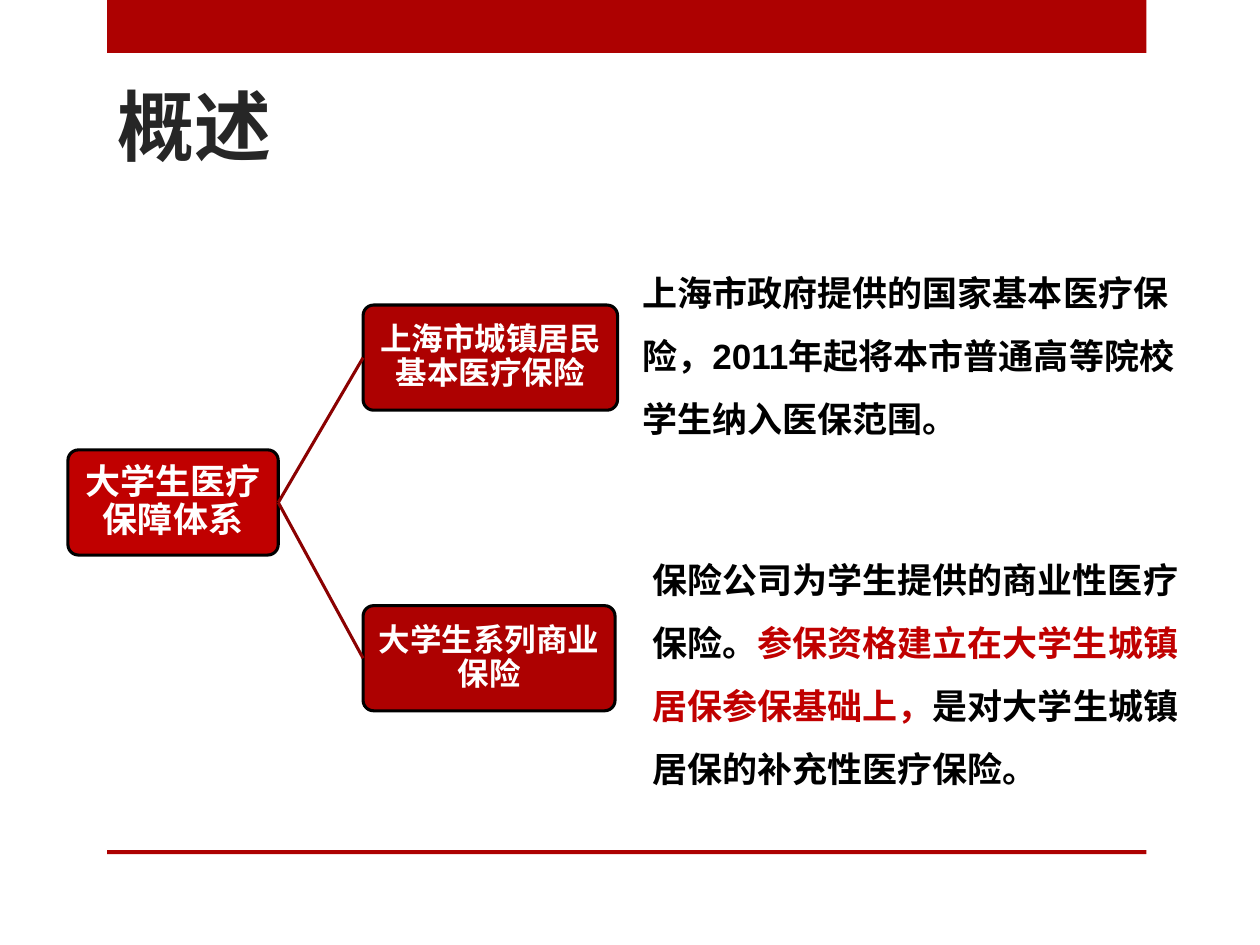
from dataclasses import dataclass

import pptx
import pptx.dml.color
import pptx.enum.shapes
import pptx.enum.text
import pptx.oxml
import pptx.oxml.ns
import pptx.util

Cm = pptx.util.Cm
Pt = pptx.util.Pt
SHAPES = pptx.enum.shapes.MSO_SHAPE
ALIGN = pptx.enum.text.PP_ALIGN
ANCHOR = pptx.enum.text.MSO_ANCHOR


@dataclass(frozen=True)
class Theme:
    font: str = "Arial"
    band: str = "AD0101"
    accent: str = "C00000"
    link: str = "8B0101"
    heading: str = "262626"
    dark: str = "000000"
    light: str = "FFFFFF"
    title_size: int = 44
    body_size: int = 20
    branch_size: int = 18
    line_width: float = 1.75


THEME = Theme()


def rgb(value):
    return pptx.dml.color.RGBColor.from_string(value)


def write_text(frame, text, *, size, color=THEME.dark, align=ALIGN.LEFT,
               anchor=ANCHOR.TOP, spacing=1.0, inset=None):
    pieces = [(text, color)] if isinstance(text, str) else text
    frame.word_wrap = True
    frame.vertical_anchor = anchor
    if inset is not None:
        frame.margin_left = frame.margin_right = Cm(inset)
        frame.margin_top = frame.margin_bottom = Cm(inset)
    paragraph = frame.paragraphs[0]
    paragraph.alignment = align
    paragraph.line_spacing = spacing
    for words, words_color in pieces:
        run = paragraph.add_run()
        run.text = words
        run.font.name = THEME.font
        run.font.size = Pt(size)
        run.font.bold = True
        run.font.color.rgb = rgb(words_color)


def add_block(slide, kind, box, fill):
    block = slide.shapes.add_shape(kind, *map(Cm, box))
    block.shadow.inherit = False
    block.fill.solid()
    block.fill.fore_color.rgb = rgb(fill)
    block.line.fill.background()
    return block


def add_frame_bands(slide, box):
    left, top, width, height = box
    rule_height = 0.08
    add_block(slide, SHAPES.RECTANGLE, (left, top, width, 1.07), THEME.band)
    add_block(slide, SHAPES.RECTANGLE,
              (left, top + height - rule_height, width, rule_height), THEME.band)


def add_text_region(slide, box, text, **text_format):
    region = slide.shapes.add_textbox(*map(Cm, box))
    write_text(region.text_frame, text, **text_format)


def add_node(slide, box, text, fill, size):
    node = add_block(slide, SHAPES.ROUNDED_RECTANGLE, box, fill)
    node.adjustments[0] = 0.1
    node.line.color.rgb = rgb(THEME.dark)
    node.line.width = Pt(THEME.line_width)
    write_text(node.text_frame, text, size=size, color=THEME.light,
               align=ALIGN.CENTER, anchor=ANCHOR.MIDDLE, spacing=0.9, inset=0.03)
    return node


def add_link(slide, root, branch):
    link = slide.shapes.add_connector(
        pptx.enum.shapes.MSO_CONNECTOR.STRAIGHT, 0, 0, 0, 0)
    link.begin_connect(root, 3)
    link.end_connect(branch, 1)
    link.line.color.rgb = rgb(THEME.link)
    link.line.width = Pt(THEME.line_width)
    link._element.spPr.append(
        pptx.oxml.parse_xml("<a:effectLst %s/>" % pptx.oxml.ns.nsdecls("a")))


def add_insurance_tree(slide, box, root_text, branches):
    left, top, width, height = box
    node_height = 2.12
    branch_left = left + 5.95
    root = add_node(slide, (left, top + 2.92, 4.24, node_height),
                    root_text, THEME.accent, THEME.body_size)
    step = (height - node_height) / (len(branches) - 1)
    for index, (text, branch_width) in enumerate(branches):
        branch = add_node(
            slide, (branch_left, top + index * step, branch_width, node_height),
            text, THEME.band, THEME.branch_size)
        add_link(slide, root, branch)


def main():
    deck = pptx.Presentation()
    deck.slide_width, deck.slide_height = Cm(25.4), Cm(19.05)
    slide = deck.slides.add_slide(deck.slide_layouts[6])

    add_frame_bands(slide, (2.16, 0, 20.95, 17.22))
    add_text_region(slide, (2.11, 1.52, 4.24, 2.0), "概述",
                    size=THEME.title_size, color=THEME.heading,
                    anchor=ANCHOR.MIDDLE)
    add_insurance_tree(slide, (1.37, 6.15, 11.08, 8.18), "大学生医疗保障体系", [
        ("上海市城镇居民基本医疗保险", 5.13),
        ("大学生系列商业保险", 5.08),
    ])
    add_text_region(
        slide, (12.7, 4.93, 11.81, 4.11),
        "上海市政府提供的国家基本医疗保险，2011年起将本市普通高等院校学生纳入医保范围。",
        size=THEME.body_size, spacing=1.5)
    add_text_region(
        slide, (12.9, 10.72, 11.61, 5.23),
        [("保险公司为学生提供的商业性医疗保险。", THEME.dark),
         ("参保资格建立在大学生城镇居保参保基础上，", THEME.accent),
         ("是对大学生城镇居保的补充性医疗保险。", THEME.dark)],
        size=THEME.body_size, spacing=1.5)

    deck.save("out.pptx")


if __name__ == "__main__":
    main()
